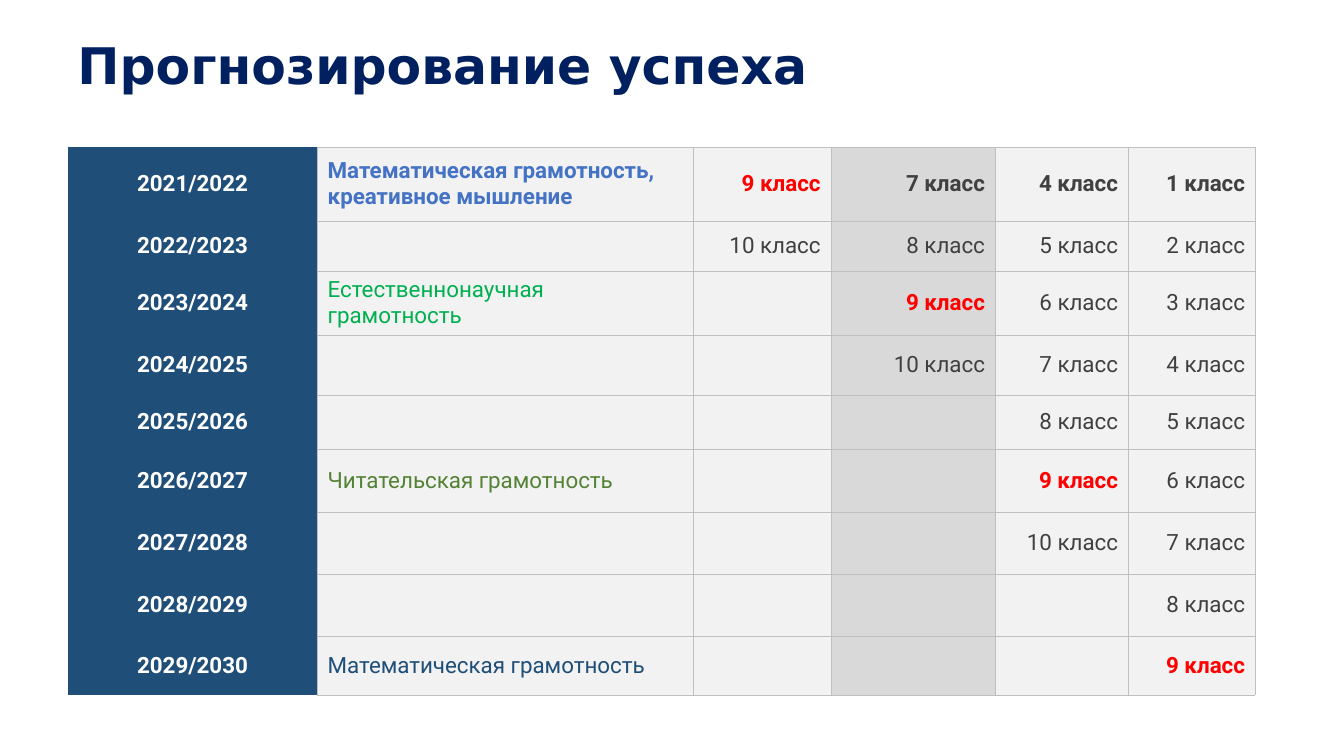
from lxml import etree
from pptx import Presentation
from pptx import util as u
from pptx.dml.color import RGBColor
from pptx.enum import text
from pptx.oxml import ns

PX = 9144  # EMU in one px, 100 px to the inch
NAVY, WHITE, GRAY, RED = "1F4E79", "FFFFFF", "404040", "FF0000"
LIGHT, SHADED, BORDER = "F2F2F2", "D9D9D9", "BFBFBF"
PLAIN_TABLE = "{2D5ABB26-0587-4C30-8999-92F81FD0307C}"

COLUMN_WIDTHS = [248, 372, 137, 163, 132, 126]
ROW_HEIGHTS = [73, 50, 52, 60, 53, 63, 61, 62, 58]
FIRST_YEAR = 2021
START_GRADES = [9, 7, 4, 1]
ASSESSED_GRADE, LAST_GRADE = 9, 10
SHADED_COLUMN = 3
SUBJECTS = {
    0: ("Математическая грамотность, креативное мышление", "4472C4"),
    2: ("Естественнонаучная грамотность", "00B050"),
    5: ("Читательская грамотность", "548235"),
    8: ("Математическая грамотность", NAVY),
}


def px(length):
    return u.Emu(length * PX)


def color(value):
    return RGBColor.from_string(value)


class SlideBuilder:
    def __init__(self, slide, font):
        self.slide = slide
        self.font = font

    def add_words(self, frame, words, ink, align="LEFT", line_spacing=None, **font_values):
        paragraph = frame.paragraphs[0]
        paragraph.alignment = text.PP_ALIGN[align]
        paragraph.line_spacing = line_spacing
        run = paragraph.add_run()
        run.text = words
        values = {"name": self.font, "size": u.Pt(16), "bold": False, **font_values}
        for name, value in values.items():
            setattr(run.font, name, value)
        run.font.color.rgb = color(ink)

    def text_box(self, left, top, width, height, words, ink, **style):
        box = self.slide.shapes.add_textbox(px(left), px(top), px(width), px(height))
        frame = box.text_frame
        frame.word_wrap = True
        frame.vertical_anchor = text.MSO_ANCHOR.MIDDLE
        self.add_words(frame, words, ink, **style)

    def table(self, left, top, widths, heights):
        """Add an empty table without a banded style."""
        frame = self.slide.shapes.add_table(
            len(heights), len(widths), px(left), px(top), px(sum(widths)), px(sum(heights)))
        table = frame.table
        table.first_row = table.horz_banding = False
        table._tbl.tblPr.find(ns.qn("a:tableStyleId")).text = PLAIN_TABLE
        for column, width in zip(table.columns, widths):
            column.width = px(width)
        for row, height in zip(table.rows, heights):
            row.height = px(height)
        return table

    def cell(self, cell, fill, sides, words="", ink=GRAY, **style):
        """Border the given sides (letters from LRTB), then fill the cell and add its words."""
        properties = cell._tc.get_or_add_tcPr()
        for side in sides:
            line = etree.SubElement(properties, ns.qn(f"a:ln{side}"), w=str(u.Pt(0.25)))
            solid = etree.SubElement(line, ns.qn("a:solidFill"))
            etree.SubElement(solid, ns.qn("a:srgbClr"), val=BORDER)
        cell.fill.solid()
        cell.fill.fore_color.rgb = color(fill)
        cell.vertical_anchor = text.MSO_ANCHOR.MIDDLE
        if words:
            self.add_words(cell.text_frame, words, ink, **style)


def main():
    presentation = Presentation()
    presentation.slide_width, presentation.slide_height = px(1333), px(750)
    slide = presentation.slides.add_slide(presentation.slide_layouts[6])
    builder = SlideBuilder(slide, "Roboto")

    builder.text_box(67, 41, 1010, 53, "Прогнозирование успеха", "002060",
                     name="DejaVu Sans", size=u.Pt(36), bold=True, line_spacing=0.9)

    table = builder.table(67, 146, COLUMN_WIDTHS, ROW_HEIGHTS)
    for row in range(len(ROW_HEIGHTS)):
        year = FIRST_YEAR + row
        builder.cell(table.cell(row, 0), NAVY, "R", f"{year}/{year + 1}", WHITE,
                     align="CENTER", bold=True)

        subject, ink = SUBJECTS.get(row, ("", GRAY))
        builder.cell(table.cell(row, 1), LIGHT, "LRTB", subject, ink, bold=row == 0)

        for column, start in enumerate(START_GRADES, 2):
            grade = start + row
            assessed = grade == ASSESSED_GRADE
            builder.cell(table.cell(row, column),
                         SHADED if column == SHADED_COLUMN else LIGHT, "LRTB",
                         f"{grade} класс" if grade <= LAST_GRADE else "",
                         RED if assessed else GRAY,
                         align="RIGHT", bold=assessed or row == 0)

    presentation.save("out.pptx")


if __name__ == "__main__":
    main()
